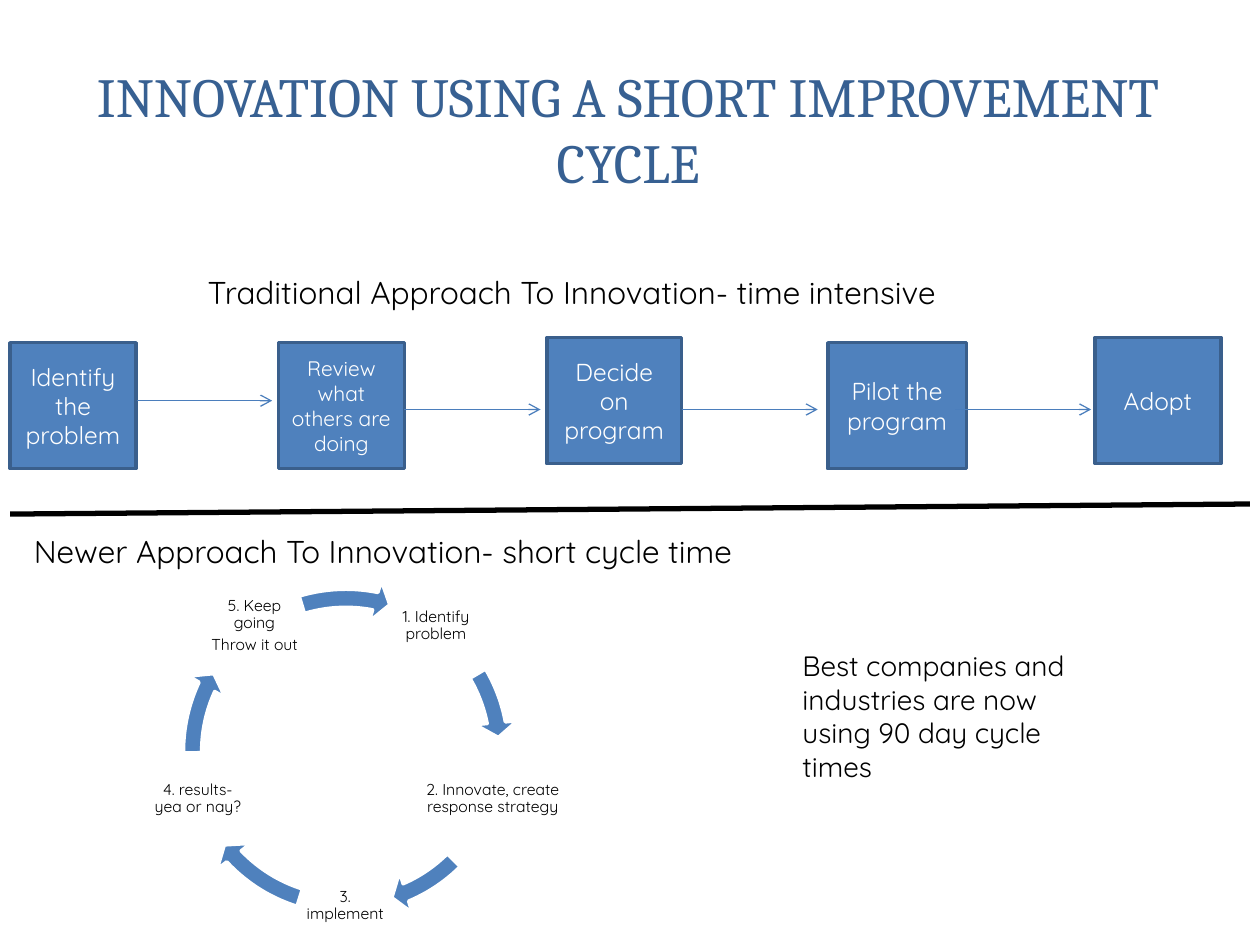
from dataclasses import dataclass

from lxml.etree import SubElement
from pptx import Presentation
from pptx.dml.color import RGBColor
from pptx.enum.shapes import MSO_CONNECTOR, MSO_SHAPE
from pptx.enum.text import MSO_ANCHOR, MSO_AUTO_SIZE, PP_ALIGN
from pptx.oxml.ns import qn
from pptx.util import Inches, Pt


@dataclass(frozen=True)
class Theme:
    heading_font: str = "Cambria"
    body_font: str = "Quicksand"
    title: RGBColor = RGBColor(0x37, 0x60, 0x92)
    fill: RGBColor = RGBColor(0x4F, 0x81, 0xBD)
    border: RGBColor = RGBColor(0x3A, 0x5F, 0x8C)
    arrow: RGBColor = RGBColor(0x4B, 0x7E, 0xBC)
    dark: RGBColor = RGBColor(0, 0, 0)
    light: RGBColor = RGBColor(0xFF, 0xFF, 0xFF)
    title_size: float = 31.5
    heading_size: float = 18
    note_size: float = 16
    step_size: float = 14
    cycle_size: float = 9


@dataclass(frozen=True)
class Step:
    text: str
    left: float
    top: float
    width: float = 1
    size: float = Theme.step_size


@dataclass(frozen=True)
class Caption:
    text: str
    left: float
    top: float
    width: float
    height: float
    size: float = Theme.heading_size


@dataclass(frozen=True)
class Stage:
    lines: tuple[str, ...]
    left: float
    top: float
    arrow_end: float  # degrees, clockwise from three o'clock
    arrow_start: float
    width: float = 0.74
    height: float = 0.74


THEME = Theme()

STEPS = [
    Step("Identify the problem", 0.08, 2.72),
    Step("Review what others are doing", 2.21, 2.72, size=12),
    Step("Decide on program", 4.34, 2.68, 1.07),
    Step("Pilot the program", 6.57, 2.72, 1.1),
    Step("Adopt", 8.69, 2.68),
]

# Start, end and height of each arrow between steps
STEP_ARROWS = [(1.09, 2.16, 3.18), (3.21, 4.29, 3.25), (5.41, 6.49, 3.25), (7.58, 8.66, 3.25)]

CAPTIONS = [
    Caption("Traditional Approach To Innovation- time intensive", 1.55, 2.12, 6.47, 0.4),
    Caption("Newer Approach To Innovation- short cycle time", 0.17, 4.17, 6.47, 0.4),
    Caption("Best companies and industries are now using 90 day cycle times",
            6.27, 5.1, 2.42, 1.18, THEME.note_size),
]

STAGES = [
    Stage(("1. Identify problem",), 3.09, 4.6, 349.16, 329.44),
    Stage(("2. Innovate, create response strategy",), 3.28, 5.85, 66.91, 45.18, 1.26, 0.98),
    Stage(("3. implement",), 2.37, 6.82, 136.84, 107.49),
    Stage(("4. results-yea or nay?",), 1.2, 5.97, 204.96, 179.52),
    Stage(("5. Keep going", "Throw it out"), 1.65, 4.6, 281.09, 253.31),
]

CYCLE_LEFT, CYCLE_TOP, CYCLE_SIZE = 1.36, 4.58, 2.77
DEGREE = 0.6  # one degree in adjustment units


def style(p, size: float, color: RGBColor, font: str = THEME.body_font, align=PP_ALIGN.CENTER) -> None:
    p.alignment = align
    p.font.size = Pt(size)
    p.font.name = font
    p.font.color.rgb = color


def paint(sp, fill: RGBColor, line: RGBColor) -> None:
    sp.shadow.inherit = False
    sp.fill.solid()
    sp.fill.fore_color.rgb = fill
    sp.line.color.rgb = line
    sp.line.width = Pt(2)


def add_title(s, text: str) -> None:
    sp = s.shapes.title
    sp.left, sp.top, sp.width, sp.height = (Inches(v) for v in (0.47, 0.45, 9.03, 1.14))
    tf = sp.text_frame
    tf.text = text
    tf.auto_size = MSO_AUTO_SIZE.NONE
    tf.vertical_anchor = MSO_ANCHOR.MIDDLE
    style(tf.paragraphs[0], THEME.title_size, THEME.title, THEME.heading_font)


def add_step(s, step: Step) -> None:
    sp = s.shapes.add_shape(MSO_SHAPE.RECTANGLE, Inches(step.left), Inches(step.top),
                            Inches(step.width), Inches(1))
    paint(sp, THEME.fill, THEME.border)
    tf = sp.text_frame
    tf.text = step.text
    tf.word_wrap = True
    tf.vertical_anchor = MSO_ANCHOR.MIDDLE
    style(tf.paragraphs[0], step.size, THEME.light)


def add_line(s, x1: float, y1: float, x2: float, y2: float,
             color: RGBColor, width: float, arrow: bool = False) -> None:
    cxn = s.shapes.add_connector(MSO_CONNECTOR.STRAIGHT, Inches(x1), Inches(y1), Inches(x2), Inches(y2))
    cxn.line.color.rgb = color
    cxn.line.width = Pt(width)
    if arrow:
        SubElement(cxn.line._get_or_add_ln(), qn("a:tailEnd"), type="arrow")
    SubElement(cxn._element.spPr, qn("a:effectLst"))


def add_caption(s, cap: Caption) -> None:
    sp = s.shapes.add_textbox(Inches(cap.left), Inches(cap.top), Inches(cap.width), Inches(cap.height))
    tf = sp.text_frame
    tf.text = cap.text
    tf.word_wrap = True
    tf.auto_size = MSO_AUTO_SIZE.SHAPE_TO_FIT_TEXT
    style(tf.paragraphs[0], cap.size, THEME.dark, align=PP_ALIGN.LEFT)


def add_stage(shapes, stage: Stage) -> None:
    # Label
    sp = shapes.add_textbox(Inches(stage.left), Inches(stage.top), Inches(stage.width), Inches(stage.height))
    tf = sp.text_frame
    tf.text = "\n".join(stage.lines)
    tf.word_wrap = True
    tf.vertical_anchor = MSO_ANCHOR.MIDDLE
    tf.margin_left = tf.margin_right = tf.margin_top = tf.margin_bottom = Inches(0.01)
    for p in tf.paragraphs:
        style(p, THEME.cycle_size, THEME.dark)
        p.line_spacing = 0.9
        p.space_after = Pt(3)

    # Arrow to the next stage
    sp = shapes.add_shape(MSO_SHAPE.CIRCULAR_ARROW, Inches(CYCLE_LEFT), Inches(CYCLE_TOP),
                          Inches(CYCLE_SIZE), Inches(CYCLE_SIZE))
    paint(sp, THEME.fill, THEME.light)
    values = (0.052, 5.6 * DEGREE, stage.arrow_end * DEGREE, stage.arrow_start * DEGREE, 0.061)
    for i, value in enumerate(values):
        sp.adjustments[i] = value


def main() -> None:
    prs = Presentation()
    prs.slide_width, prs.slide_height = Inches(10), Inches(7.5)
    s = prs.slides.add_slide(prs.slide_layouts[5])
    add_title(s, "INNOVATION USING A SHORT IMPROVEMENT CYCLE")

    # Traditional approach: a row of steps
    for step in STEPS:
        add_step(s, step)
    for x1, x2, y in STEP_ARROWS:
        add_line(s, x1, y, x2, y, THEME.arrow, 0.75, arrow=True)

    # Newer approach: a cycle of stages
    cycle = s.shapes.add_group_shape()
    for stage in STAGES:
        add_stage(cycle.shapes, stage)

    # Captions and divider
    for cap in CAPTIONS:
        add_caption(s, cap)
    add_line(s, 0.08, 4.08, 9.92, 4, THEME.dark, 3)

    prs.save("out.pptx")


if __name__ == "__main__":
    main()
